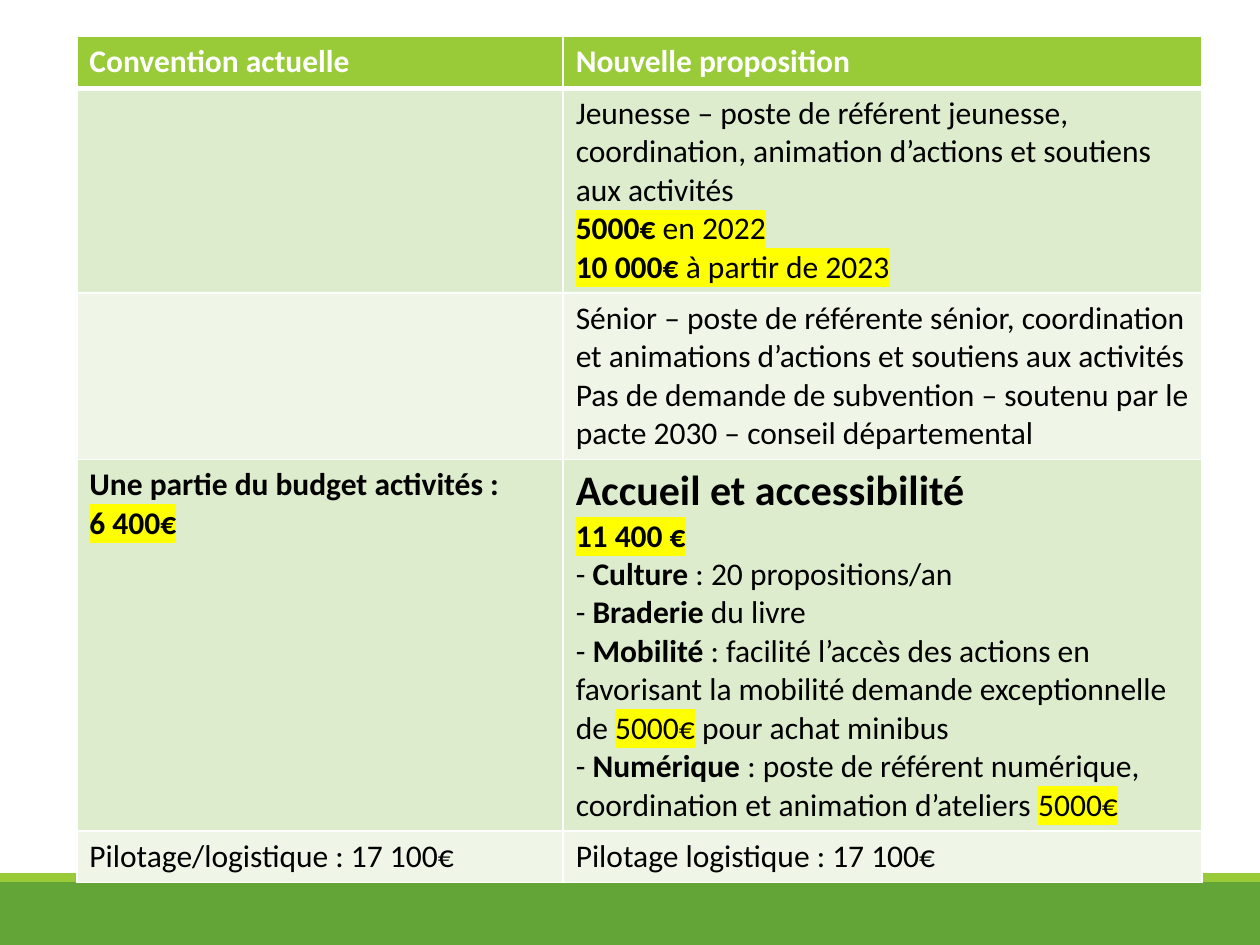
from lxml import etree
from pptx import Presentation
from pptx.dml.color import RGBColor
from pptx.enum.shapes import MSO_SHAPE
from pptx.oxml.ns import qn
from pptx.util import Inches, Pt

RECTANGLE = MSO_SHAPE.RECTANGLE
WHITE = RGBColor(0xFF, 0xFF, 0xFF)
BLACK = RGBColor(0, 0, 0)
YELLOW = RGBColor(0xFF, 0xFF, 0)
LIME = RGBColor(0x99, 0xCB, 0x38)
GREEN = RGBColor(0x63, 0xA5, 0x37)
BANDS = RGBColor(0xDE, 0xEC, 0xCE), RGBColor(0xEF, 0xF6, 0xE8)

FONT = "Calibri"
BODY_SIZE, HEADING_SIZE = 18, 24
PLAIN, BOLD, MARKED, BOLD_MARKED = (False, False), (True, False), (False, True), (True, True)

HEADING = "Accueil et accessibilité"
ROWS = [
    (0.41, [[("Convention actuelle", BOLD)]], [[("Nouvelle proposition", BOLD)]]),
    (1.6, [], [
        [("Jeunesse – poste de référent jeunesse, coordination, animation d’actions et soutiens aux activités", PLAIN)],
        [("5000€ ", BOLD_MARKED), ("en 2022", MARKED)],
        [("10 000€ ", BOLD_MARKED), ("à partir de 2023", MARKED)],
    ]),
    (1.3, [], [
        [("Sénior – poste de référente sénior, coordination et animations d’actions et soutiens aux activités", PLAIN)],
        [("Pas de demande de subvention – soutenu par le pacte 2030 – conseil départemental", PLAIN)],
    ]),
    (2.9, [
        [("Une partie du budget activités :", BOLD)],
        [("6 400€", BOLD_MARKED)],
    ], [
        [(HEADING, BOLD)],
        [("11 400 €", BOLD_MARKED)],
        [("- ", PLAIN), ("Culture", BOLD), (" : 20 propositions/an", PLAIN)],
        [("- ", PLAIN), ("Braderie", BOLD), (" du livre", PLAIN)],
        [("- ", PLAIN), ("Mobilité", BOLD),
         (" : facilité l’accès des actions en favorisant la mobilité demande exceptionnelle de ", PLAIN),
         ("5000€", MARKED), (" pour achat minibus", PLAIN)],
        [("- ", PLAIN), ("Numérique", BOLD),
         (" : poste de référent numérique, coordination et animation d’ateliers ", PLAIN),
         ("5000€", MARKED)],
    ]),
    (0.41, [[("Pilotage/logistique : 17 100€", PLAIN)]], [[("Pilotage logistique : 17 100€", PLAIN)]]),
]
COLUMN_WIDTHS = 3.86, 5.07
TABLE_LEFT, TABLE_TOP = 0.61, 0.29
FOOTER_BANDS = [(7, 0.5, GREEN), (6.93, 0.07, LIME)]


def add_color(parent, color):
    etree.SubElement(parent, qn("a:srgbClr"), val=str(color))


def set_borders(cell, bottom_width):
    properties = cell._tc.get_or_add_tcPr()
    for side, width in (("L", 1), ("R", 1), ("T", 1), ("B", bottom_width)):
        border = etree.SubElement(properties, qn(f"a:ln{side}"), w=str(Pt(width)))
        add_color(etree.SubElement(border, qn("a:solidFill")), WHITE)


def write_paragraph(paragraph, segments, color):
    paragraph.font.name = FONT
    paragraph.font.size = Pt(HEADING_SIZE if segments[0][0] == HEADING else BODY_SIZE)
    paragraph.font.color.rgb = color
    for text, (bold, marked) in segments:
        run = paragraph.add_run()
        run.text = text
        run.font.bold = bold
        if marked:
            add_color(etree.SubElement(run._r.get_or_add_rPr(), qn("a:highlight")), YELLOW)


def fill_cell(cell, paragraphs, is_header, background):
    set_borders(cell, 3 if is_header else 1)
    cell.fill.solid()
    cell.fill.fore_color.rgb = background
    frame = cell.text_frame
    for index, segments in enumerate(paragraphs):
        paragraph = frame.add_paragraph() if index else frame.paragraphs[0]
        write_paragraph(paragraph, segments, WHITE if is_header else BLACK)


def main():
    deck = Presentation()
    deck.slide_width, deck.slide_height = Inches(10), Inches(7.5)
    slide = deck.slides.add_slide(deck.slide_layouts[6])

    for top, height, color in FOOTER_BANDS:
        band = slide.shapes.add_shape(RECTANGLE, 0, Inches(top), deck.slide_width, Inches(height))
        band.shadow.inherit = False
        band.fill.solid()
        band.fill.fore_color.rgb = color
        band.line.fill.background()

    table = slide.shapes.add_table(
        len(ROWS), len(COLUMN_WIDTHS), Inches(TABLE_LEFT), Inches(TABLE_TOP),
        Inches(sum(COLUMN_WIDTHS)), Inches(sum(row[0] for row in ROWS))).table
    for column, width in zip(table.columns, COLUMN_WIDTHS):
        column.width = Inches(width)
    for index, (height, *contents) in enumerate(ROWS):
        table.rows[index].height = Inches(height)
        background = BANDS[(index - 1) % 2] if index else LIME
        for cell, paragraphs in zip(table.rows[index].cells, contents):
            fill_cell(cell, paragraphs, index == 0, background)

    deck.save("out.pptx")


if __name__ == "__main__":
    main()
